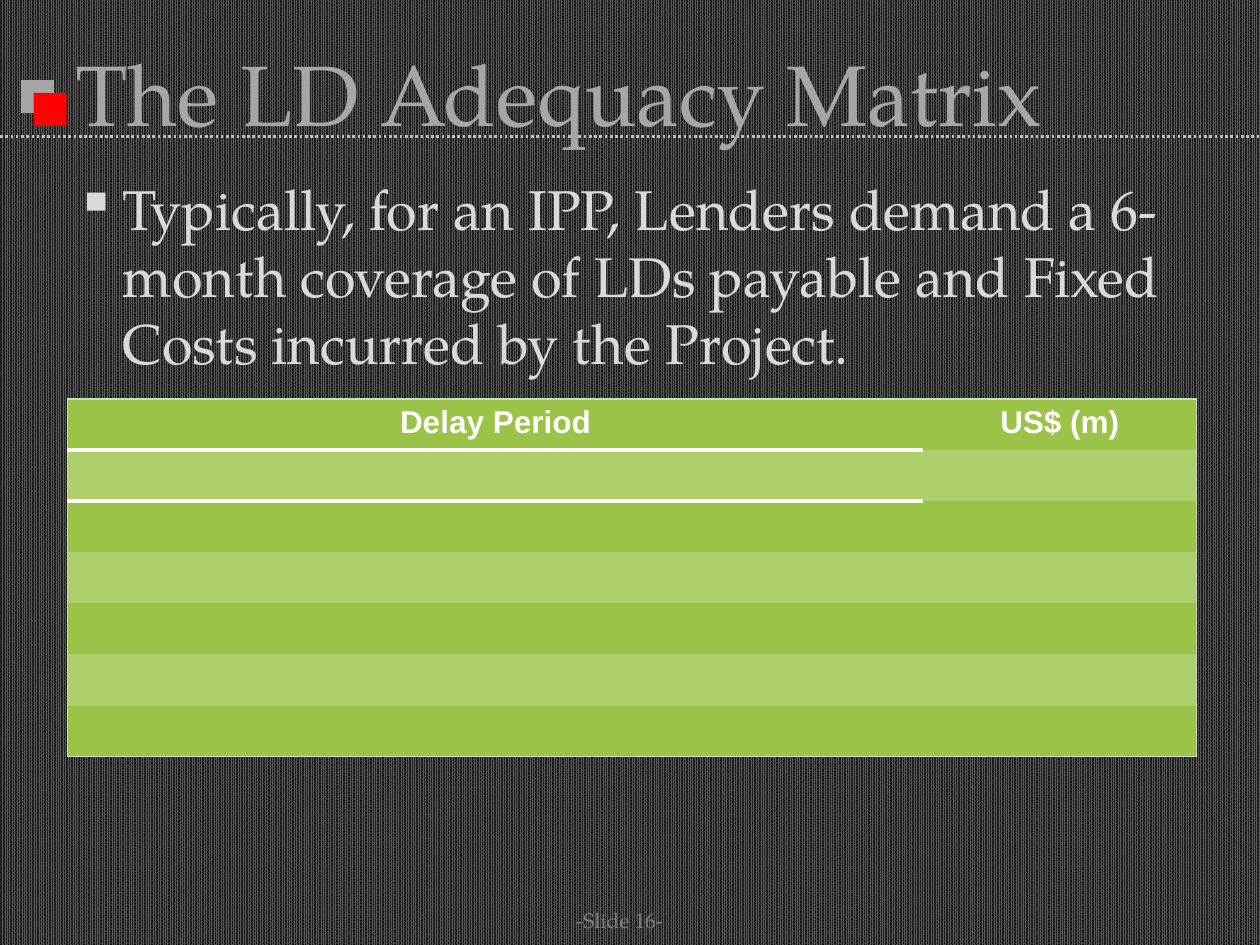
from lxml import etree
from pptx import Presentation
from pptx.dml.color import RGBColor
from pptx.enum import dml, shapes, text
from pptx.oxml import ns
from pptx.util import Pt

SERIF, SANS = "TeX Gyre Pagella", "Arial"
WHITE = RGBColor(0xFF, 0xFF, 0xFF)
RED = RGBColor(0xFF, 0x00, 0x00)
TITLE_GREY = RGBColor(0xA6, 0xA6, 0xA6)
RULE_GREY = RGBColor(0xBF, 0xBF, 0xBF)
BODY_GREY = RGBColor(0xD9, 0xD9, 0xD9)
FOOTER_GREY = RGBColor(0x80, 0x80, 0x80)
WEAVE_LIGHT = RGBColor(0x59, 0x59, 0x59)
WEAVE_DARK = RGBColor(0x0D, 0x0D, 0x0D)
GREEN = RGBColor(0x9B, 0xC3, 0x48)
PALE_GREEN = RGBColor(0xAF, 0xCF, 0x6D)
EDGE = RGBColor(0xD0, 0xDC, 0xBF)
NO_TABLE_STYLE = "{2D5ABB26-0587-4C30-8999-92F81FD0307C}"


def set_font(paragraph, name, size, color, bold=False):
    font = paragraph.font
    font.name, font.size, font.bold = name, Pt(size), bold
    font.color.rgb = color


def add_line_of_text(slide, box, words, size, color, anchor):
    frame = slide.shapes.add_textbox(*map(Pt, box)).text_frame
    frame.word_wrap = True
    frame.vertical_anchor = anchor
    paragraph = frame.paragraphs[0]
    paragraph.text = words
    set_font(paragraph, SERIF, size, color)
    return paragraph


def paint_background(slide):
    fill = slide.background.fill
    fill.patterned()
    fill.pattern = dml.MSO_PATTERN.PERCENT_90
    fill.fore_color.rgb = WEAVE_LIGHT
    fill.back_color.rgb = WEAVE_DARK


def add_heading(slide, left, top, width, height):
    side, step = 18.9, 7.2
    for i, color in enumerate((TITLE_GREY, RED)):
        square = slide.shapes.add_shape(
            shapes.MSO_SHAPE.RECTANGLE,
            Pt(left + 12 + i * step), Pt(top + 24.2 + i * step), Pt(side), Pt(side))
        square.shadow.inherit = False
        square.fill.solid()
        square.fill.fore_color.rgb = color
        square.line.fill.background()
    rule_y = Pt(top + 56.4)
    rule = slide.shapes.add_connector(
        shapes.MSO_CONNECTOR.STRAIGHT, Pt(left), rule_y, Pt(left + width), rule_y)
    rule.line.color.rgb = RULE_GREY
    rule.line.width = Pt(1.5)
    rule.line.dash_style = dml.MSO_LINE.ROUND_DOT
    etree.SubElement(rule._element.spPr, ns.qn("a:effectLst"))
    add_line_of_text(slide, (left + 36, top, width - 72, height),
                     "The LD Adequacy Matrix", 49, TITLE_GREY, text.MSO_ANCHOR.MIDDLE)


def add_body(slide, left, top, width, height):
    frame = slide.shapes.add_textbox(Pt(left), Pt(top), Pt(width), Pt(height)).text_frame
    frame.word_wrap = True
    point = frame.paragraphs[0]
    point.text = ("Typically, for an IPP, Lenders demand a 6-month coverage of LDs "
                  "payable and Fixed Costs incurred by the Project.")
    properties = point._p.get_or_add_pPr()
    properties.set("marL", str(Pt(27)))
    properties.set("indent", str(-Pt(27)))
    etree.SubElement(properties, ns.qn("a:buChar"), char="▪")
    set_font(point, SERIF, 32, BODY_GREY)


def set_borders(cell, borders):
    properties = cell._tc.get_or_add_tcPr()
    sides = [side for side in "LRTB" if side in borders]
    for i, side in enumerate(sides):
        color, width = borders[side]
        line = etree.Element(ns.qn(f"a:ln{side}"), w=str(Pt(width)))
        solid = etree.SubElement(line, ns.qn("a:solidFill"))
        etree.SubElement(solid, ns.qn("a:srgbClr"), val=str(color))
        properties.insert(i, line)


def add_matrix(slide, left, top, width, height):
    headings = ("Delay Period", "US$ (m)")
    rows, first_width = 7, 489
    table = slide.shapes.add_table(
        rows, len(headings), Pt(left), Pt(top), Pt(width), Pt(height)).table
    table._tbl.tblPr.find(ns.qn("a:tableStyleId")).text = NO_TABLE_STYLE
    table.columns[0].width = Pt(first_width)
    table.columns[1].width = Pt(width - first_width)
    edge = (EDGE, 0.75)
    for r, row in enumerate(table.rows):
        row.height = Pt(height / rows)
        for c, cell in enumerate(row.cells):
            cell.fill.solid()
            cell.fill.fore_color.rgb = PALE_GREEN if r % 2 else GREEN
            borders = {"LR"[c]: edge}
            if r == 0:
                borders["T"] = edge
                heading = cell.text_frame.paragraphs[0]
                heading.text = headings[c]
                heading.alignment = text.PP_ALIGN.CENTER
                set_font(heading, SANS, 18, WHITE, bold=True)
            if r == rows - 1:
                borders["B"] = edge
            if (r, c) == (0, 0):
                borders["B"] = (WHITE, 3)
            if (r, c) == (1, 0):
                borders["T"] = (WHITE, 3)
            set_borders(cell, borders)


def add_footer(slide, left, top, width, height):
    number = add_line_of_text(slide, (left, top, width, height), "-Slide 16-",
                              12, FOOTER_GREY, text.MSO_ANCHOR.MIDDLE)
    number.alignment = text.PP_ALIGN.CENTER


def main():
    deck = Presentation()
    deck.slide_width, deck.slide_height = Pt(720), Pt(540)
    slide = deck.slides.add_slide(deck.slide_layouts[6])
    paint_background(slide)
    add_heading(slide, 0, 21.6, 720, 62.6)
    add_body(slide, 36, 96, 648, 386.6)
    add_footer(slide, 270, 511, 168, 29)
    add_matrix(slide, 38.6, 228, 645, 204.4)
    deck.save("out.pptx")


if __name__ == "__main__":
    main()
